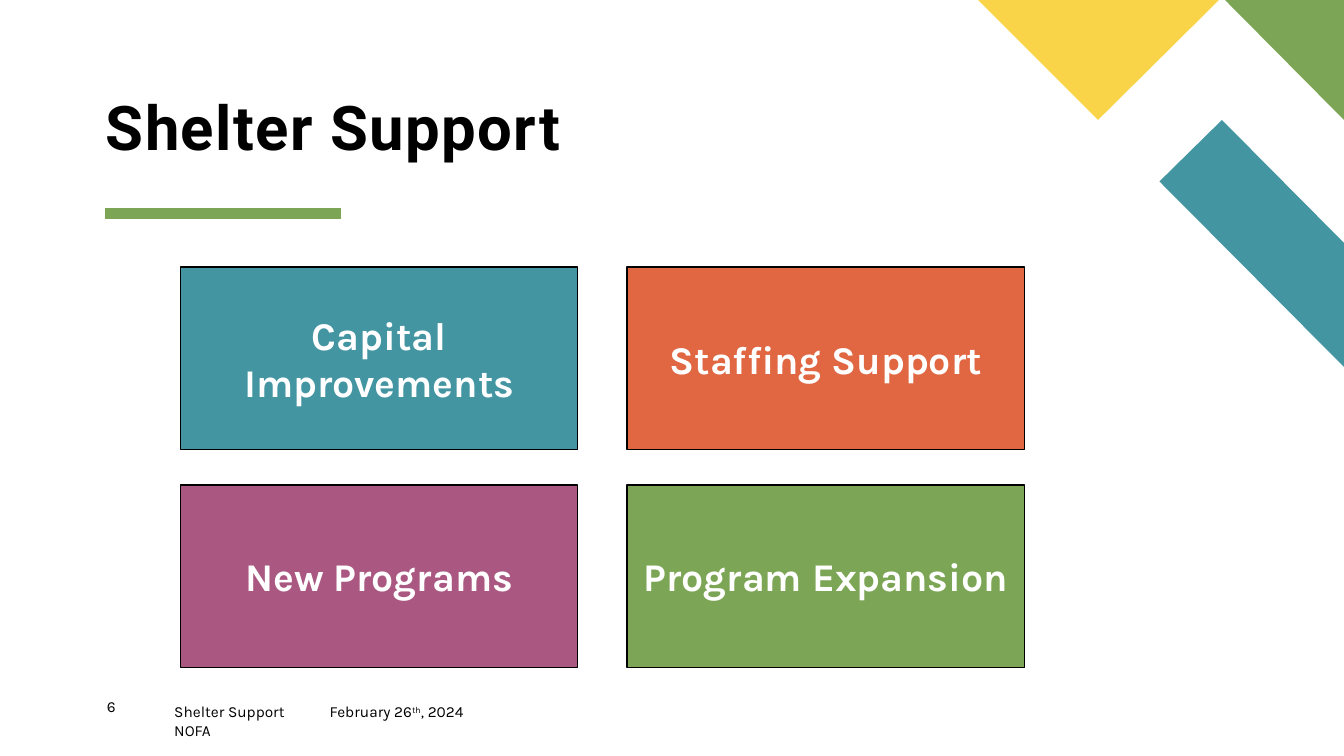
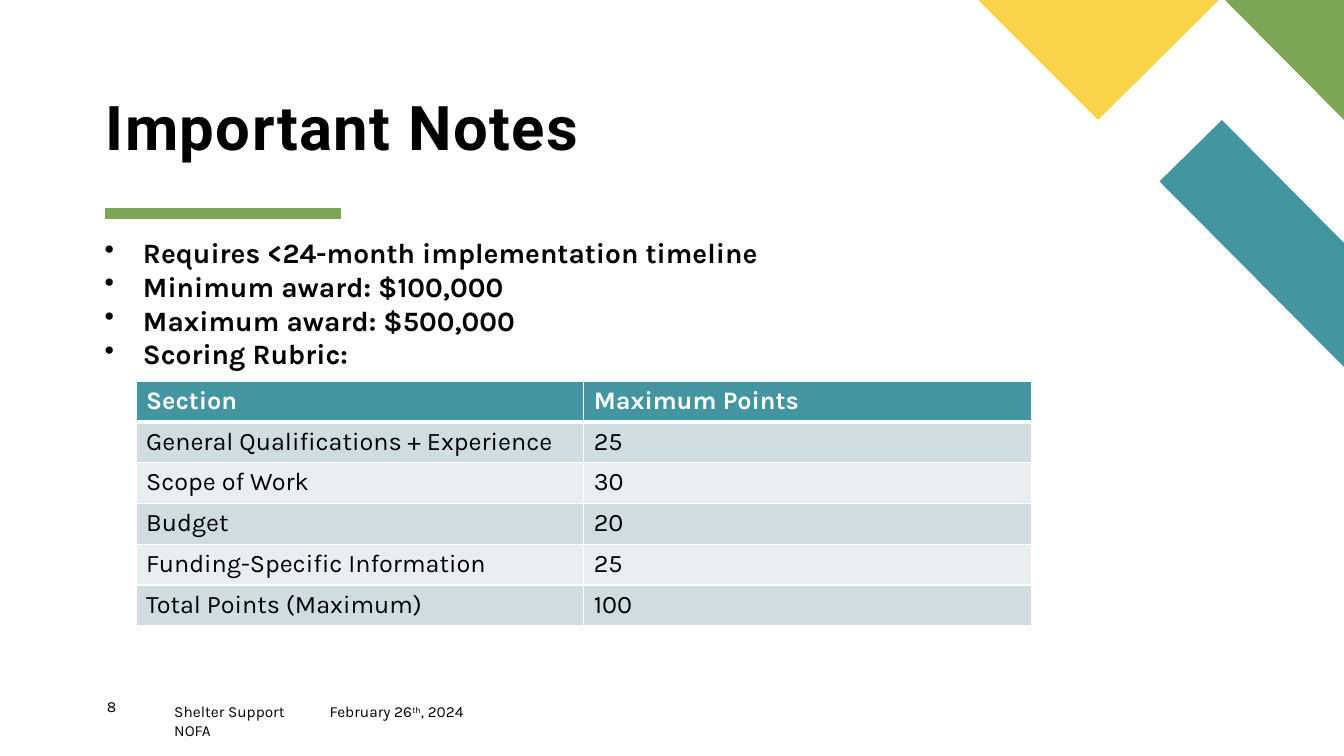
"""Builds the two Shelter Support slides with their shared title, band and footer."""
from dataclasses import dataclass

from lxml import etree
from pptx import Presentation
from pptx.dml.color import RGBColor
from pptx.enum.shapes import MSO_CONNECTOR, MSO_SHAPE
from pptx.enum.text import MSO_ANCHOR, PP_ALIGN
from pptx.oxml.ns import qn
from pptx.util import Inches, Pt

RECT = MSO_SHAPE.RECTANGLE
STRAIGHT = MSO_CONNECTOR.STRAIGHT
TOP, MIDDLE, BOTTOM = MSO_ANCHOR.TOP, MSO_ANCHOR.MIDDLE, MSO_ANCHOR.BOTTOM
LEFT, CENTER = PP_ALIGN.LEFT, PP_ALIGN.CENTER


@dataclass(frozen=True)
class Theme:
    teal: str = "4495A2"
    green: str = "7CA655"
    yellow: str = "F9D448"
    orange: str = "E06742"
    plum: str = "AA5881"
    black: str = "000000"
    white: str = "FFFFFF"
    row_dark: str = "CFDDE0"
    row_light: str = "E9EFF0"
    title_font: str = "Roboto"
    body_font: str = "Karla"
    title_size: int = 44
    card_size: int = 28
    bullet_size: int = 20
    table_size: int = 18
    footer_size: int = 11


THEME = Theme()


@dataclass(frozen=True)
class Card:
    text: str
    color: str


@dataclass(frozen=True)
class Ornament:
    color: str
    points: tuple


ORNAMENTS = (
    Ornament(THEME.teal, ((13.33, 3.64), (13.33, 2.41), (12.12, 1.19), (11.5, 1.8))),
    Ornament(THEME.green, ((13.33, 1.19), (13.33, 0), (12.15, 0))),
    Ornament(THEME.yellow, ((9.7, 0), (10.89, 1.19), (12.09, 0))),
)
CARDS = (
    Card("Capital Improvements", THEME.teal),
    Card("Staffing Support", THEME.orange),
    Card("New Programs", THEME.plum),
    Card("Program Expansion", THEME.green),
)
NOTES = (
    "Requires <24-month implementation timeline",
    "Minimum award: $100,000",
    "Maximum award: $500,000",
    "Scoring Rubric:",
)
RUBRIC = (
    ("Section", "Maximum Points"),
    ("General Qualifications + Experience", "25"),
    ("Scope of Work", "30"),
    ("Budget", "20"),
    ("Funding-Specific Information", "25"),
    ("Total Points (Maximum)", "100"),
)


def rgb(color: str) -> RGBColor:
    return RGBColor.from_string(color)


def write(tf, text: str, *, size: int, color: str = THEME.black, font: str = THEME.body_font,
          bold: bool = False, align=LEFT, line: float = 1.0, track: int = 0,
          bullet: str = "") -> None:
    """Write lines as paragraphs; text between carets is superscript."""
    for i, content in enumerate(text.split("\n")):
        p = tf.add_paragraph() if i else tf.paragraphs[0]
        p.alignment, p.line_spacing = align, line
        if bullet:
            pPr = p._p.get_or_add_pPr()
            pPr.set("marL", str(Inches(0.38)))
            pPr.set("indent", str(Inches(-0.38)))
            etree.SubElement(pPr, qn("a:buChar"), char=bullet)
        for j, part in enumerate(content.split("^")):
            r = p.add_run()
            r.text = part
            r.font.name, r.font.size, r.font.bold = font, Pt(size), bold
            r.font.color.rgb = rgb(color)
            rPr = r._r.get_or_add_rPr()
            if track:
                rPr.set("spc", str(track * 100))
            if j % 2:
                rPr.set("baseline", "30000")


def add_text(s, x: float, y: float, w: float, h: float, text: str, *,
             inset: bool = False, anchor=TOP, **style) -> None:
    tf = s.shapes.add_textbox(Inches(x), Inches(y), Inches(w), Inches(h)).text_frame
    tf.word_wrap, tf.vertical_anchor = True, anchor
    if not inset:
        tf.margin_left = tf.margin_right = tf.margin_top = tf.margin_bottom = 0
    write(tf, text, **style)


def add_ornament(s, ornament: Ornament) -> None:
    points = [(Inches(x), Inches(y)) for x, y in ornament.points]
    builder = s.shapes.build_freeform(*points[0])
    builder.add_line_segments(points[1:], close=True)
    sp = builder.convert_to_shape()
    sp.shadow.inherit = False
    sp.fill.solid()
    sp.fill.fore_color.rgb = rgb(ornament.color)
    sp.line.fill.background()


def add_rule(s) -> None:
    rule = s.shapes.add_connector(STRAIGHT, Inches(1.04), Inches(2.12), Inches(3.38), Inches(2.12))
    rule.line.color.rgb, rule.line.width = rgb(THEME.green), Pt(8)
    etree.SubElement(rule._element.spPr, qn("a:effectLst"))


def add_base_slide(prs, title: str, number: int):
    s = prs.slides.add_slide(prs.slide_layouts[6])
    add_rule(s)
    for ornament in ORNAMENTS:
        add_ornament(s, ornament)
    add_text(s, 1.05, 0.96, 6.96, 0.67, title, anchor=BOTTOM, size=THEME.title_size,
             font=THEME.title_font, bold=True, line=0.9, track=1)
    size = THEME.footer_size
    add_text(s, 1.06, 6.92, 0.57, 0.27, str(number), size=size)
    add_text(s, 1.63, 6.92, 1.64, 0.27, "Shelter Support NOFA", inset=True, size=size)
    add_text(s, 3.27, 6.97, 1.44, 0.19, "February 26^th^, 2024", size=size)
    return s


def add_card(s, card: Card, x: float, y: float) -> None:
    sp = s.shapes.add_shape(RECT, Inches(x), Inches(y), Inches(3.94), Inches(1.81))
    sp.shadow.inherit = False
    sp.fill.solid()
    sp.fill.fore_color.rgb = rgb(card.color)
    sp.line.color.rgb, sp.line.width = rgb(THEME.black), Pt(1)
    sp.text_frame.word_wrap, sp.text_frame.vertical_anchor = True, MIDDLE
    write(sp.text_frame, card.text, size=THEME.card_size, color=THEME.white,
          bold=True, align=CENTER)


def set_borders(cell, top: int, bottom: int) -> None:
    tcPr = cell._tc.get_or_add_tcPr()
    widths = (("a:lnL", 1), ("a:lnR", 1), ("a:lnT", top), ("a:lnB", bottom))
    for i, (tag, width) in enumerate(widths):
        ln = etree.Element(qn(tag), w=str(Pt(width)))
        fill = etree.SubElement(ln, qn("a:solidFill"))
        etree.SubElement(fill, qn("a:srgbClr"), val=THEME.white)
        tcPr.insert(i, ln)


def add_rubric(s) -> None:
    rows, cols = len(RUBRIC), len(RUBRIC[0])
    table = s.shapes.add_table(rows, cols, Inches(1.35), Inches(3.78),
                               Inches(8.88), Inches(0.405 * rows)).table
    table.first_row = table.horz_banding = False
    for i, values in enumerate(RUBRIC):
        header = i == 0
        band = THEME.row_dark if i % 2 else THEME.row_light
        for j, value in enumerate(values):
            cell = table.cell(i, j)
            cell.fill.solid()
            cell.fill.fore_color.rgb = rgb(THEME.teal if header else band)
            set_borders(cell, top=3 if i == 1 else 1, bottom=3 if header else 1)
            write(cell.text_frame, value, size=THEME.table_size, bold=header,
                  color=THEME.white if header else THEME.black)


def build_support(prs) -> None:
    s = add_base_slide(prs, "Shelter Support", 6)
    for i, card in enumerate(CARDS):
        row, col = divmod(i, 2)
        add_card(s, card, 1.79 + 4.43 * col, 2.65 + 2.16 * row)


def build_notes(prs) -> None:
    s = add_base_slide(prs, "Important Notes", 8)
    add_text(s, 0.94, 2.29, 10.84, 1.45, "\n".join(NOTES), inset=True,
             size=THEME.bullet_size, bold=True, bullet="•")
    add_rubric(s)


def main() -> None:
    prs = Presentation()
    prs.slide_width, prs.slide_height = Inches(13.33), Inches(7.5)
    build_support(prs)
    build_notes(prs)
    prs.save("out.pptx")


if __name__ == "__main__":
    main()
